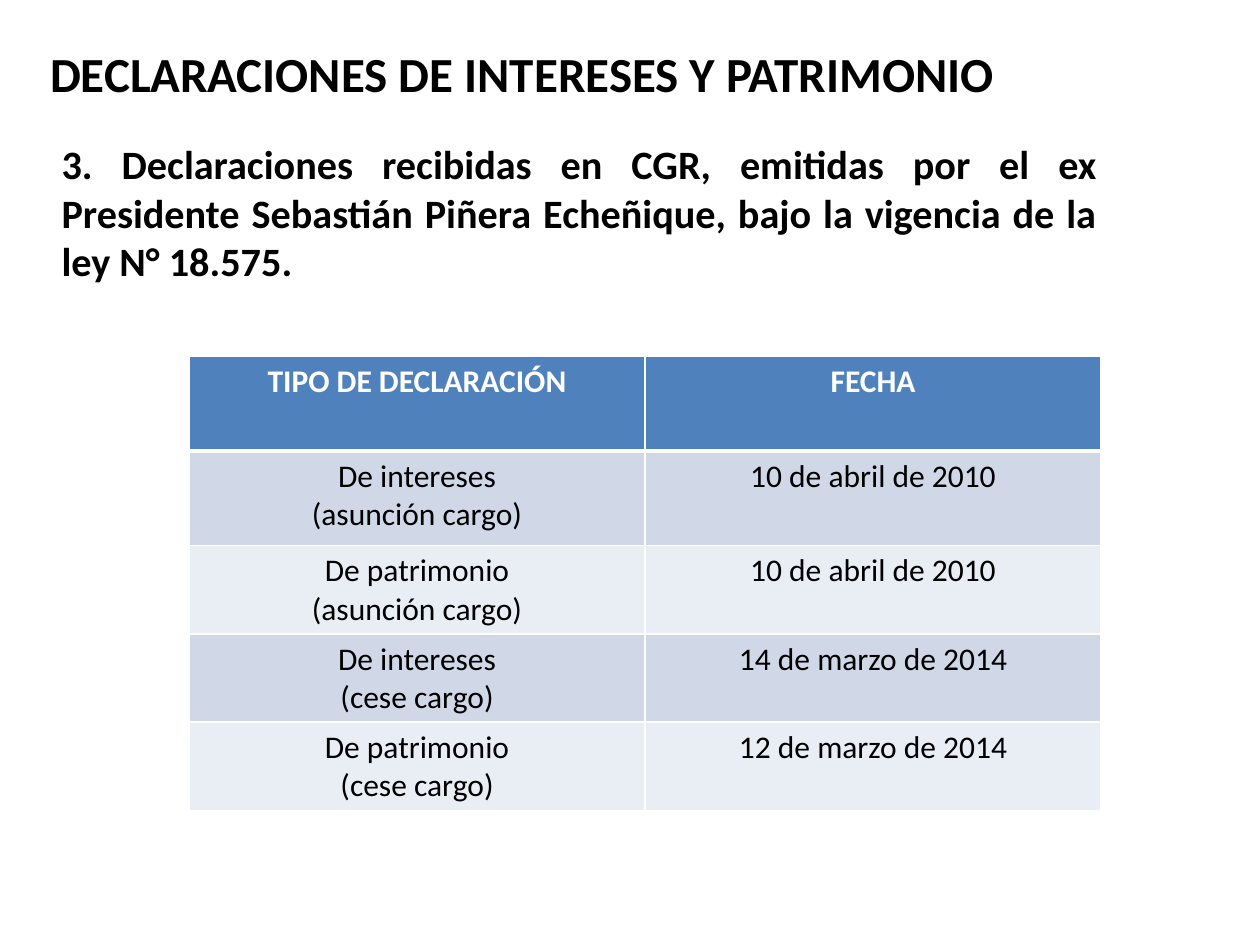
import pptx
import pptx.util
import pptx.dml.color
import pptx.enum.text
import pptx.oxml

Inches = pptx.util.Inches
Pt = pptx.util.Pt
ALIGN = pptx.enum.text.PP_ALIGN
ANCHOR = pptx.enum.text.MSO_ANCHOR
NS = "http://schemas.openxmlformats.org/drawingml/2006/main"

COLORS = {
    "ink": "000000",
    "white": "FFFFFF",
    "head": "4F81BD",
    "odd": "D0D8E8",
    "even": "E9EDF4",
}

ROWS = [
    ("TIPO DE DECLARACIÓN", "FECHA"),
    ("De intereses\n(asunción cargo)", "10 de abril de 2010"),
    ("De patrimonio\n(asunción cargo)", "10 de abril de 2010"),
    ("De intereses\n(cese cargo)", "14 de marzo de 2014"),
    ("De patrimonio\n(cese cargo)", "12 de marzo de 2014"),
]


class Deck:
    font = "Calibri"

    def __init__(self, wide, high):
        self.file = pptx.Presentation()
        self.file.slide_width = Inches(wide)
        self.file.slide_height = Inches(high)
        self.slide = self.file.slides.add_slide(self.file.slide_layouts[6])

    def color(self, name):
        return pptx.dml.color.RGBColor.from_string(COLORS[name])

    def label(self, frame, text, size, ink, bold, align):
        frame.text = text
        for line in frame.paragraphs:
            line.alignment = align
            line.font.name = self.font
            line.font.size = Pt(size)
            line.font.bold = bold
            line.font.color.rgb = self.color(ink)

    def text(self, area, text, size, align, anchor):
        box = self.slide.shapes.add_textbox(*map(Inches, area))
        frame = box.text_frame
        frame.word_wrap = True
        frame.vertical_anchor = anchor
        self.label(frame, text, size, "ink", True, align)

    def border(self, cell, widths):
        props = cell._tc.get_or_add_tcPr()
        for side, width in widths.items():
            props.append(pptx.oxml.parse_xml(
                f'<a:ln{side} xmlns:a="{NS}" w="{Pt(width)}"><a:solidFill>'
                f'<a:srgbClr val="{COLORS["white"]}"/></a:solidFill></a:ln{side}>'))

    def table(self, area, rows, heights):
        shape = self.slide.shapes.add_table(
            len(rows), len(rows[0]), *map(Inches, area))
        grid = shape.table
        for y, (row, high) in enumerate(zip(rows, heights)):
            grid.rows[y].height = Inches(high)
            head = y == 0
            fill = "head" if head else "odd" if y % 2 else "even"
            ink = "white" if head else "ink"
            edges = {"L": 1, "R": 1, "T": 3 if y == 1 else 1, "B": 3 if head else 1}
            for x, text in enumerate(row):
                cell = grid.cell(y, x)
                self.border(cell, edges)
                cell.fill.solid()
                cell.fill.fore_color.rgb = self.color(fill)
                self.label(cell.text_frame, text, 18, ink, head, ALIGN.CENTER)


def main():
    deck = Deck(10, 7.5)
    deck.text((0.3, 0.24, 8.14, 0.67), "DECLARACIONES DE INTERESES Y PATRIMONIO",
              28, ALIGN.LEFT, ANCHOR.MIDDLE)
    deck.text((0.39, 1.06, 8.43, 1.4),
              "3. Declaraciones recibidas en CGR, emitidas por el ex Presidente "
              "Sebastián Piñera Echeñique, bajo la vigencia de la ley N° 18.575.",
              23, ALIGN.JUSTIFY, ANCHOR.TOP)
    deck.table((1.5, 2.83, 7.24, 3.6), ROWS, [0.75] * 2 + [0.7] * 3)
    deck.file.save("out.pptx")


if __name__ == "__main__":
    main()
